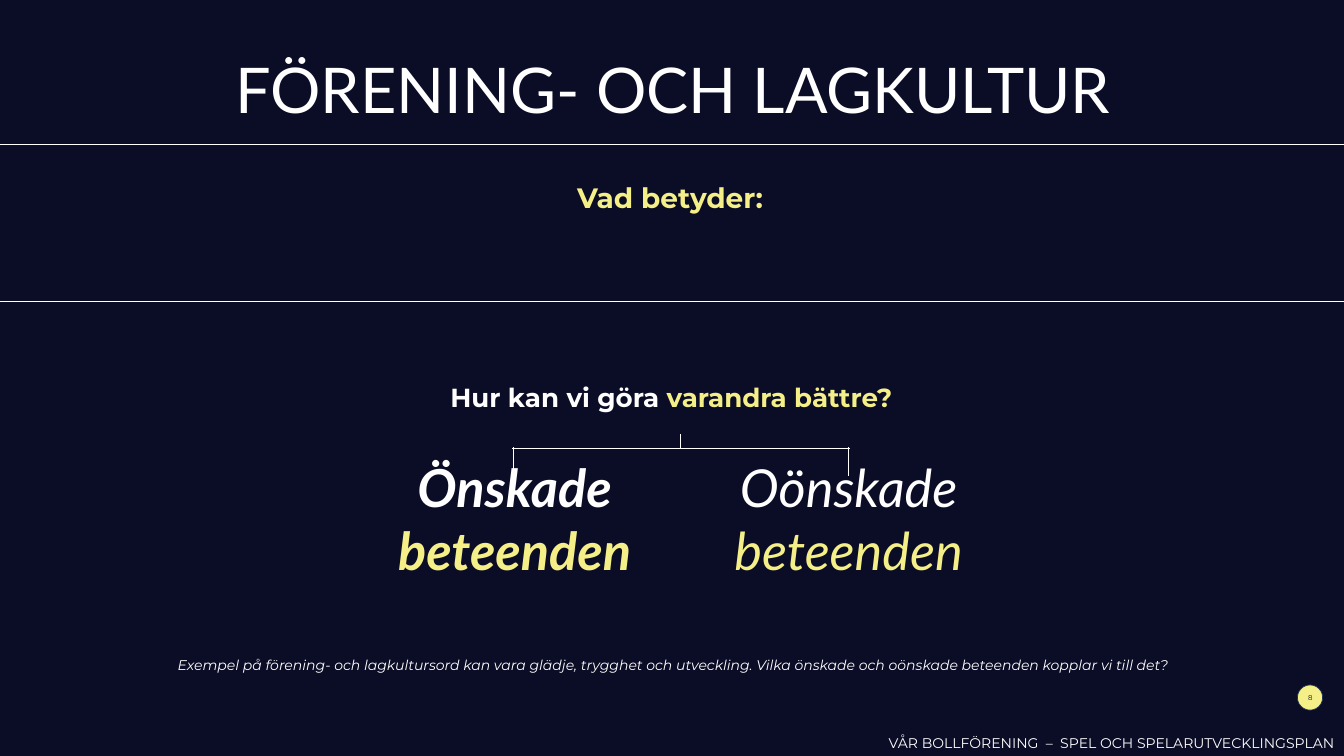
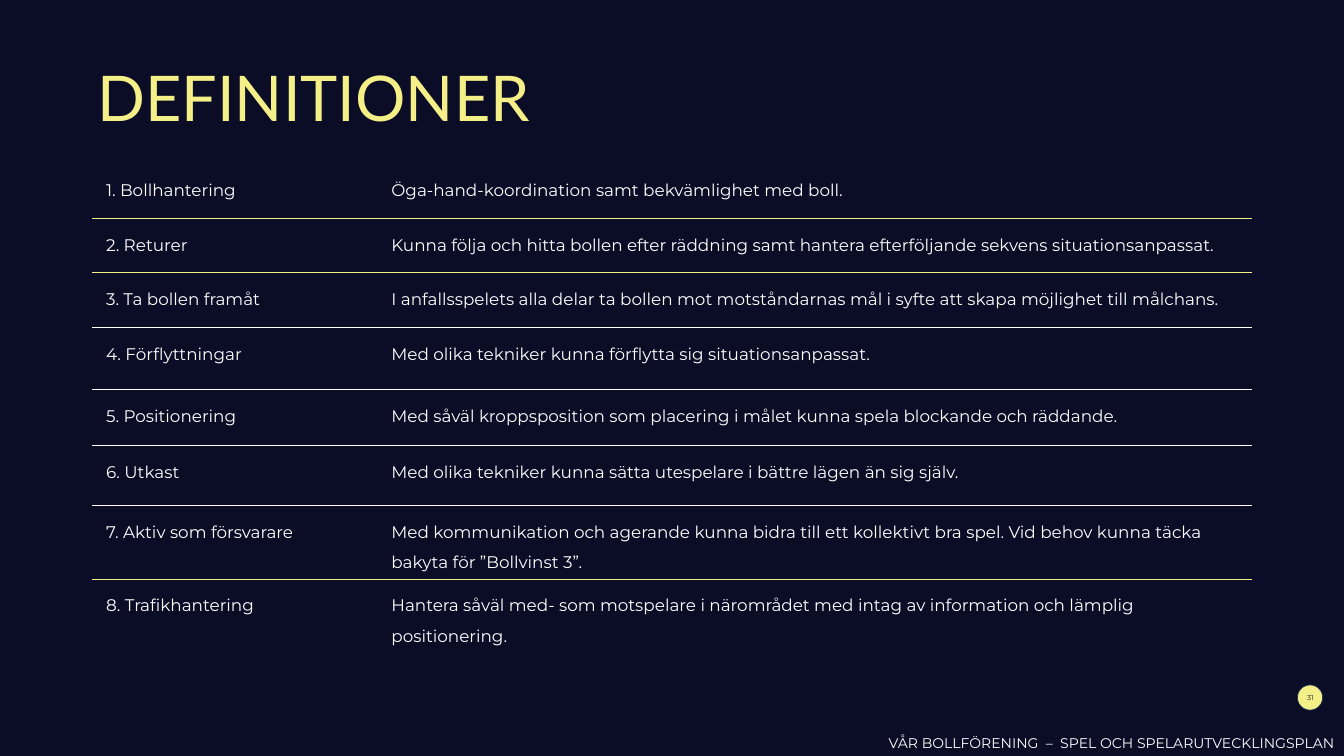
"""Builds two slides on club culture and definitions of goalkeeping skills."""
import dataclasses

import lxml.etree
import pptx
import pptx.dml.color
import pptx.enum.shapes
import pptx.enum.text
import pptx.oxml.ns
import pptx.util

Pt = pptx.util.Pt
Align = pptx.enum.text.PP_ALIGN
Anchor = pptx.enum.text.MSO_ANCHOR
qn = pptx.oxml.ns.qn


@dataclasses.dataclass(frozen=True)
class Theme:
    night: str = "0B0C26"
    yellow: str = "F5EF88"
    white: str = "FFFFFF"
    ring: str = "1E3256"
    heading: str = "Lato"
    body: str = "Montserrat"
    title: float = 90
    behaviour: float = 74.7
    lead: float = 40
    question: float = 37.3
    cell: float = 24
    small: float = 20
    number: float = 10
    hairline: float = 0.5
    rule: float = 1


THEME = Theme()
SLIDE_SIZE = (1919.5, 1080)
FOOTER = "VÅR BOLLFÖRENING  –  SPEL OCH SPELARUTVECKLINGSPLAN"

CULTURE = {
    "title": "FÖRENING- OCH LAGKULTUR",
    "number": "8",
    "lead": "Vad betyder:",
    "question": [("Hur kan vi göra ", THEME.white), ("varandra bättre?", THEME.yellow)],
    "behaviours": [
        ("Oönskade ", (906.5, 639, 611, 202), False),
        ("Önskade ", (427, 639, 616, 202), True),
    ],
    "behaviour_word": "beteenden",
    "example": "Exempel på förening- och lagkultursord kan vara glädje, trygghet och utveckling. "
               "Vilka önskade och oönskade beteenden kopplar vi till det?",
}

DEFINITIONS = {
    "title": "DEFINITIONER",
    "number": "31",
    "columns": (407.5, 1248.5),
    "rows": [
        (78, THEME.yellow, "1. Bollhantering",
         "Öga-hand-koordination samt bekvämlighet med boll."),
        (78, THEME.yellow, "2. Returer",
         "Kunna följa och hitta bollen efter räddning samt hantera efterföljande sekvens "
         "situationsanpassat."),
        (78, THEME.white, "3. Ta bollen framåt",
         "I anfallsspelets alla delar ta bollen mot motståndarnas mål i syfte att skapa "
         "möjlighet till målchans."),
        (89, THEME.white, "4. Förflyttningar",
         "Med olika tekniker kunna förflytta sig situationsanpassat."),
        (80, THEME.white, "5. Positionering",
         "Med såväl kroppsposition som placering i målet kunna spela blockande och räddande."),
        (85, THEME.white, "6. Utkast",
         "Med olika tekniker kunna sätta utespelare i bättre lägen än sig själv."),
        (78, THEME.yellow, "7. Aktiv som försvarare",
         "Med kommunikation och agerande kunna bidra till ett kollektivt bra spel. "
         "Vid behov kunna täcka bakyta för ”Bollvinst 3”."),
        (78, None, "8. Trafikhantering",
         "Hantera såväl med- som motspelare i närområdet med intag av information och "
         "lämplig positionering."),
    ],
}


def rgb(color):
    return pptx.dml.color.RGBColor.from_string(color)


def write(frame, text, size, font=THEME.body, color=THEME.white, bold=False,
          italic=False, align=Align.LEFT, spacing=None):
    """Writes one paragraph from a string or a list of (text, colour) spans."""
    para = frame.paragraphs[0]
    para.alignment = align
    if spacing:
        para.line_spacing = spacing
    for words, tint in [(text, color)] if isinstance(text, str) else text:
        span = para.add_run()
        span.text = words
        span.font.name = font
        span.font.size = Pt(size)
        span.font.bold = bold
        span.font.italic = italic
        span.font.color.rgb = rgb(tint)


def add_text(page, place, text, size, anchor=Anchor.TOP, wrap=True, **style):
    frame = page.shapes.add_textbox(*map(Pt, place)).text_frame
    frame.word_wrap = wrap
    frame.vertical_anchor = anchor
    write(frame, text, size, **style)


def add_line(page, start, end, width):
    line = page.shapes.add_connector(
        pptx.enum.shapes.MSO_CONNECTOR.STRAIGHT, *map(Pt, (*start, *end)))
    line.line.color.rgb = rgb(THEME.white)
    line.line.width = Pt(width)
    lxml.etree.SubElement(line._element.spPr, qn("a:effectLst"))


def add_page(deck, content, title_place, **title_style):
    """Adds a slide with the shared title, number badge and footer."""
    page = deck.slides.add_slide(deck.slide_layouts[5])
    title = page.shapes.title
    title.left, title.top, title.width, title.height = map(Pt, title_place)
    title.text_frame.auto_size = pptx.enum.text.MSO_AUTO_SIZE.NONE
    title.text_frame.vertical_anchor = Anchor.MIDDLE
    write(title.text_frame, content["title"], THEME.title, font=THEME.heading,
          spacing=0.9, **title_style)

    badge = page.shapes.add_shape(
        pptx.enum.shapes.MSO_SHAPE.OVAL, *map(Pt, (1853, 978.5, 36, 36)))
    badge.shadow.inherit = False
    badge.fill.solid()
    badge.fill.fore_color.rgb = rgb(THEME.yellow)
    badge.line.color.rgb = rgb(THEME.ring)
    badge.line.width = Pt(THEME.rule)
    add_text(page, (1814, 968.5, 115, 57.5), content["number"], THEME.number,
             anchor=Anchor.MIDDLE, color=THEME.night, align=Align.CENTER)
    add_text(page, (1262, 1045.5, 683, 32.5), FOOTER, THEME.small)
    return page


def add_bracket(page, left, right, middle, bar, top, bottom):
    add_line(page, (left - 1.5, bar), (right + 1.5, bar), THEME.hairline)
    for leg in (left, right):
        add_line(page, (leg, bar - 1), (leg, bottom), THEME.hairline)
    add_line(page, (middle, top), (middle, bar + 1), THEME.hairline)


def add_culture(deck):
    page = add_page(deck, CULTURE, (133, 28, 1656, 209), align=Align.CENTER)
    for words, place, bold in CULTURE["behaviours"]:
        spans = [(words, THEME.white), (CULTURE["behaviour_word"], THEME.yellow)]
        add_text(page, place, spans, THEME.behaviour, font=THEME.heading, bold=bold,
                 italic=True, align=Align.CENTER, anchor=Anchor.MIDDLE)
    add_text(page, (636, 541.5, 649, 168.5), CULTURE["question"], THEME.question,
             bold=True, wrap=False)
    add_bracket(page, left=733, right=1212, middle=972, bar=640, top=620.5, bottom=680)
    add_text(page, (129, 230.5, 1656, 145), CULTURE["lead"], THEME.lead, bold=True,
             color=THEME.yellow, align=Align.CENTER, spacing=1.5)
    for height in (206.5, 431):
        add_line(page, (-42.5, height), (1962.5, height), THEME.rule)
    add_text(page, (83.5, 934, 1756, 32), CULTURE["example"], THEME.small,
             italic=True, align=Align.CENTER)


def set_borders(cell, top, bottom):
    properties = cell._tc.get_or_add_tcPr()
    edges = {"a:lnL": None, "a:lnR": None, "a:lnT": top, "a:lnB": bottom}
    for index, (tag, color) in enumerate(edges.items()):
        edge = lxml.etree.Element(qn(tag), w=str(Pt(THEME.hairline)))
        if color:
            fill = lxml.etree.SubElement(edge, qn("a:solidFill"))
            lxml.etree.SubElement(fill, qn("a:srgbClr"), val=color)
        else:
            lxml.etree.SubElement(edge, qn("a:noFill"))
        properties.insert(index, edge)


def add_definitions(deck):
    page = add_page(deck, DEFINITIONS, (132, 39.5, 1656, 209), color=THEME.yellow)
    rows, columns = DEFINITIONS["rows"], DEFINITIONS["columns"]
    table = page.shapes.add_table(
        len(rows), len(columns), Pt(132), Pt(233.5), Pt(sum(columns)),
        Pt(sum(row[0] for row in rows))).table
    table.first_row = table.horz_banding = False
    for column, width in zip(table.columns, columns):
        column.width = Pt(width)
    above = None
    for index, (height, below, *texts) in enumerate(rows):
        table.rows[index].height = Pt(height)
        for cell, text in zip(table.rows[index].cells, texts):
            cell.margin_left = cell.margin_right = Pt(19.5)
            cell.margin_top = cell.margin_bottom = Pt(9.5)
            cell.fill.solid()
            cell.fill.fore_color.rgb = rgb(THEME.night)
            set_borders(cell, above, below)
            write(cell.text_frame, text, THEME.cell, spacing=1.5)
        above = below


def main():
    deck = pptx.Presentation()
    deck.slide_width, deck.slide_height = map(Pt, SLIDE_SIZE)
    background = deck.slide_master.background.fill
    background.solid()
    background.fore_color.rgb = rgb(THEME.night)
    add_culture(deck)
    add_definitions(deck)
    deck.save("out.pptx")


if __name__ == "__main__":
    main()
